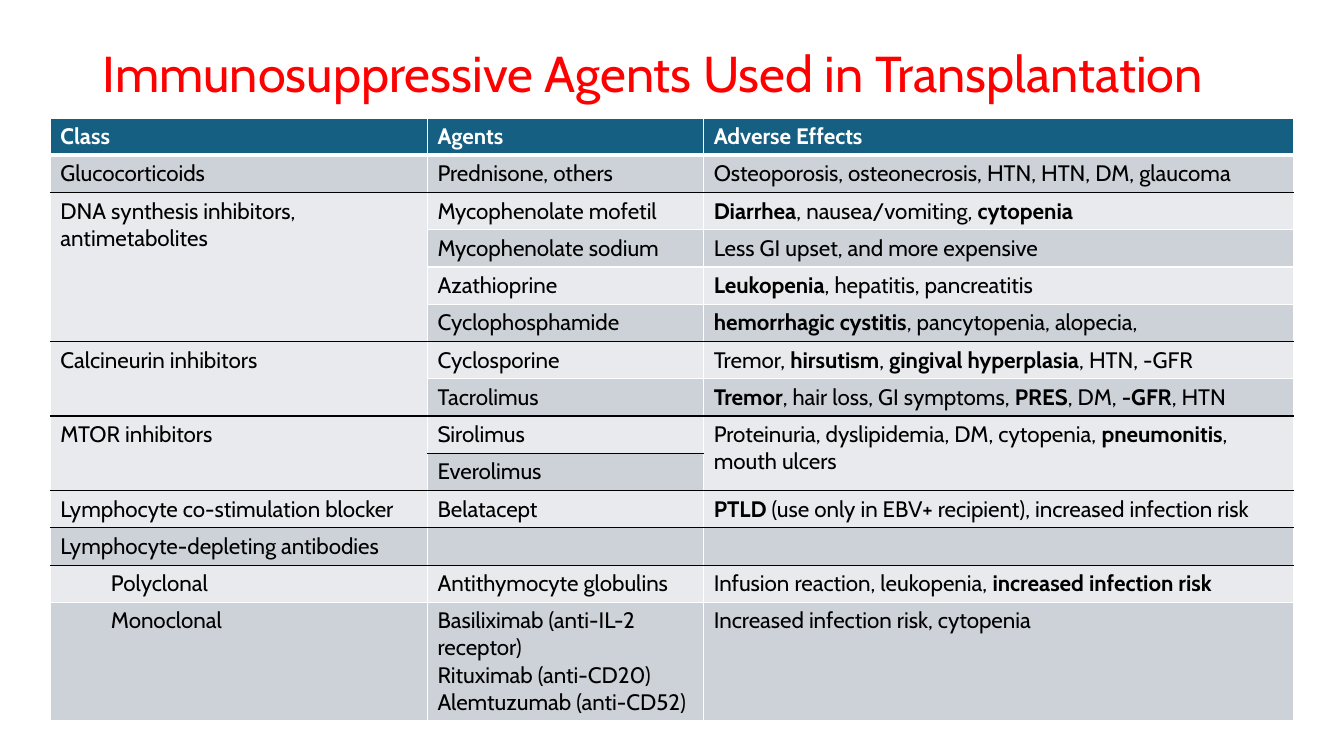
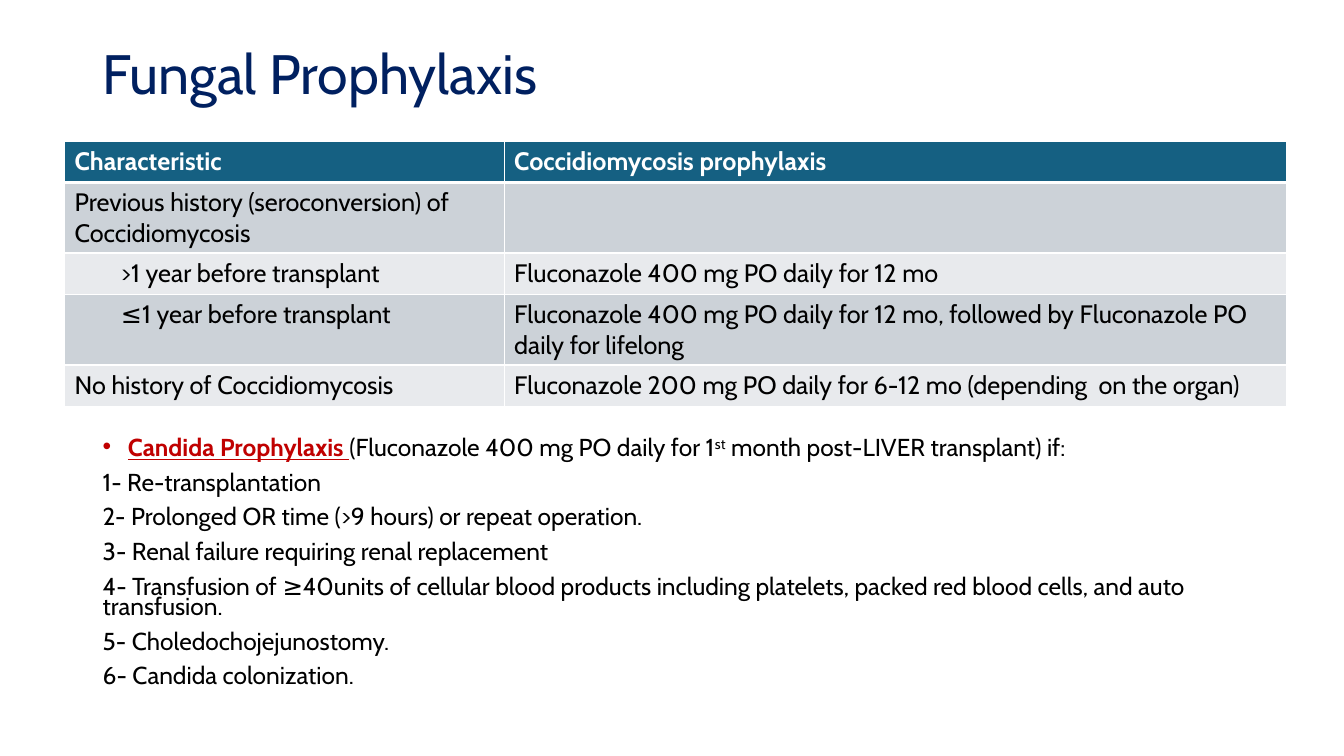
"""Build two slides on transplant immunosuppression and fungal prophylaxis."""
from lxml.etree import SubElement
from pptx import Presentation
from pptx.dml.color import RGBColor
from pptx.enum.text import MSO_ANCHOR
from pptx.oxml.ns import qn
from pptx.util import Inches, Pt

FONT = "Cabin"
COLORS = {
    "red": "FF0000", "navy": "002060", "crimson": "C00000",
    "header": "156082", "dark_band": "CCD2D8", "light_band": "E8EAED",
    "black": "000000", "white": "FFFFFF",
}

# In table cells *stars* mark bold, a leading | indents, None joins the cell above.
AGENTS = {
    "at": (0.5, 1.17),
    "widths": [3.74, 2.74, 5.85],
    "heights": [0.37] * 13 + [1.17],
    "size": 16,
    "indent": 0.5,
    "black_rules": {1, 5, 7, 8, 9, 10, 11},
    "rows": [
        ("Class", "Agents", "Adverse Effects"),
        ("Glucocorticoids", "Prednisone, others",
         "Osteoporosis, osteonecrosis, HTN, HTN, DM, glaucoma"),
        ("DNA synthesis inhibitors, antimetabolites", "Mycophenolate mofetil",
         "*Diarrhea*, nausea/vomiting, *cytopenia*"),
        (None, "Mycophenolate sodium", "Less GI upset, and more expensive"),
        (None, "Azathioprine", "*Leukopenia*, hepatitis, pancreatitis"),
        (None, "Cyclophosphamide", "*hemorrhagic cystitis*, pancytopenia, alopecia,"),
        ("Calcineurin inhibitors", "Cyclosporine",
         "Tremor, *hirsutism*, *gingival hyperplasia*, HTN, -GFR"),
        (None, "Tacrolimus", "*Tremor*, hair loss, GI symptoms, *PRES*, DM, *-GFR*, HTN"),
        ("MTOR inhibitors", "Sirolimus",
         "Proteinuria, dyslipidemia, DM, cytopenia, *pneumonitis*, mouth ulcers"),
        (None, "Everolimus", None),
        ("Lymphocyte co-stimulation blocker", "Belatacept",
         "*PTLD* (use only in EBV+ recipient), increased infection risk"),
        ("Lymphocyte-depleting antibodies", "", ""),
        ("|Polyclonal", "Antithymocyte globulins",
         "Infusion reaction, leukopenia, *increased infection risk*"),
        ("|Monoclonal",
         "Basiliximab (anti-IL-2 receptor)\nRituximab (anti-CD20)\nAlemtuzumab (anti-CD52)",
         "Increased infection risk, cytopenia"),
    ],
}
FUNGAL = {
    "at": (0.64, 1.4),
    "widths": [4.36, 7.76],
    "heights": [0.41, 0.7, 0.41, 0.7, 0.41],
    "size": 18,
    "indent": 0.46,
    "black_rules": set(),
    "rows": [
        ("Characteristic", "Coccidiomycosis prophylaxis"),
        ("Previous history (seroconversion) of Coccidiomycosis", ""),
        ("|>1 year before transplant", "Fluconazole 400 mg PO daily for 12 mo"),
        ("|≤1 year before transplant",
         "Fluconazole 400 mg PO daily for 12 mo, followed by Fluconazole PO daily for lifelong"),
        ("No history of Coccidiomycosis",
         "Fluconazole 200 mg PO daily for 6-12 mo (depending  on the organ)"),
    ],
}
CANDIDA_LEAD = [
    ("Candida Prophylaxis ", "heading"),
    ("(Fluconazole 400 mg PO daily for 1", "plain"),
    ("st", "superscript"),
    (" month post-LIVER transplant) if:", "plain"),
]
CANDIDA_RISKS = [
    "Re-transplantation",
    "Prolonged OR time (>9 hours) or repeat operation.",
    "Renal failure requiring renal replacement",
    "Transfusion of ≥40units of cellular blood products including platelets, "
    "packed red blood cells, and auto transfusion.",
    "Choledochojejunostomy.",
    "Candida colonization.",
]


def rgb(color):
    return RGBColor.from_string(COLORS[color])


def add_run(paragraph, text, size, color="black", bold=False):
    run = paragraph.add_run()
    run.text = text
    run.font.name = FONT
    run.font.size = Pt(size)
    run.font.bold = bold
    run.font.color.rgb = rgb(color)
    return run


def add_text_frame(slide, left, top, width, height):
    frame = slide.shapes.add_textbox(*map(Inches, (left, top, width, height))).text_frame
    frame.word_wrap = True
    return frame


def add_title(slide, text, size, color):
    frame = add_text_frame(slide, 0.92, 0.4, 11.5, 0.72)
    frame.vertical_anchor = MSO_ANCHOR.MIDDLE
    frame.paragraphs[0].line_spacing = 0.9
    add_run(frame.paragraphs[0], text, size, color)


def add_border(cell, side, color, width):
    line = SubElement(cell._tc.get_or_add_tcPr(), qn(f"a:ln{side}"), w=str(Pt(width)))
    fill = SubElement(line, qn("a:solidFill"))
    SubElement(fill, qn("a:srgbClr"), val=COLORS[color])


def fill_text(cell, text, size, indent, header):
    frame = cell.text_frame
    for number, line in enumerate(text.split("\n")):
        paragraph = frame.add_paragraph() if number else frame.paragraphs[0]
        if line.startswith("|"):
            paragraph._p.get_or_add_pPr().set("marL", str(Inches(indent)))
        for part, piece in enumerate(line.lstrip("|").split("*")):
            if piece:
                add_run(paragraph, piece, size, "white" if header else "black",
                        header or part % 2 == 1)
        if not line:
            SubElement(paragraph._p, qn("a:endParaRPr"), sz=str(size * 100))


def add_grid(slide, content):
    rows, widths, heights = content["rows"], content["widths"], content["heights"]
    left, top = content["at"]
    table = slide.shapes.add_table(
        len(rows), len(widths), Inches(left), Inches(top),
        Inches(sum(widths)), Inches(sum(heights))).table
    for column, width in zip(table.columns, widths):
        column.width = Inches(width)
    for row, height in zip(table.rows, heights):
        row.height = Inches(height)

    def rule_below(row):
        return ("black" if row in content["black_rules"] else "white",
                3 if row == 0 else 1)

    for r, row in enumerate(rows):
        for c, text in enumerate(row):
            first = last = r
            while rows[first][c] is None:
                first -= 1
            while last + 1 < len(rows) and rows[last + 1][c] is None:
                last += 1
            cell = table.cell(r, c)
            add_border(cell, "L", "white", 1)
            add_border(cell, "R", "white", 1)
            add_border(cell, "T", *rule_below(first - 1))
            add_border(cell, "B", *rule_below(last))
            band = "dark_band" if first % 2 else "light_band"
            cell.fill.solid()
            cell.fill.fore_color.rgb = rgb(band if first else "header")
            if text is not None:
                fill_text(cell, text, content["size"], content["indent"], r == 0)
                if last > r:
                    cell.merge(table.cell(last, c))


def add_candida(slide):
    frame = add_text_frame(slide, 0.92, 4.32, 11.5, 2.79)
    lead = frame.paragraphs[0]
    for text, style in CANDIDA_LEAD:
        heading = style == "heading"
        run = add_run(lead, text, 17.5, "crimson" if heading else "black", heading)
        run.font.underline = heading
        if style == "superscript":
            run.font._element.set("baseline", "30000")
    for number, risk in enumerate(CANDIDA_RISKS, 1):
        add_run(frame.add_paragraph(), f"{number}- {risk}", 17.5)
    for paragraph in frame.paragraphs:
        paragraph.line_spacing = 0.7
        paragraph.space_before = Pt(10)
    properties = lead._p.get_or_add_pPr()
    properties.set("marL", str(Inches(0.25)))
    properties.set("indent", str(Inches(-0.25)))
    SubElement(properties, qn("a:buFont"), typeface="Arial")
    SubElement(properties, qn("a:buChar"), char="•")


def main():
    deck = Presentation()
    deck.slide_width, deck.slide_height = Inches(13.33), Inches(7.5)
    blank = deck.slide_layouts[6]

    agents = deck.slides.add_slide(blank)
    add_title(agents, "Immunosuppressive Agents Used in Transplantation", 36, "red")
    add_grid(agents, AGENTS)

    fungal = deck.slides.add_slide(blank)
    add_title(fungal, "Fungal Prophylaxis", 39.6, "navy")
    add_grid(fungal, FUNGAL)
    add_candida(fungal)

    deck.save("out.pptx")


if __name__ == "__main__":
    main()
